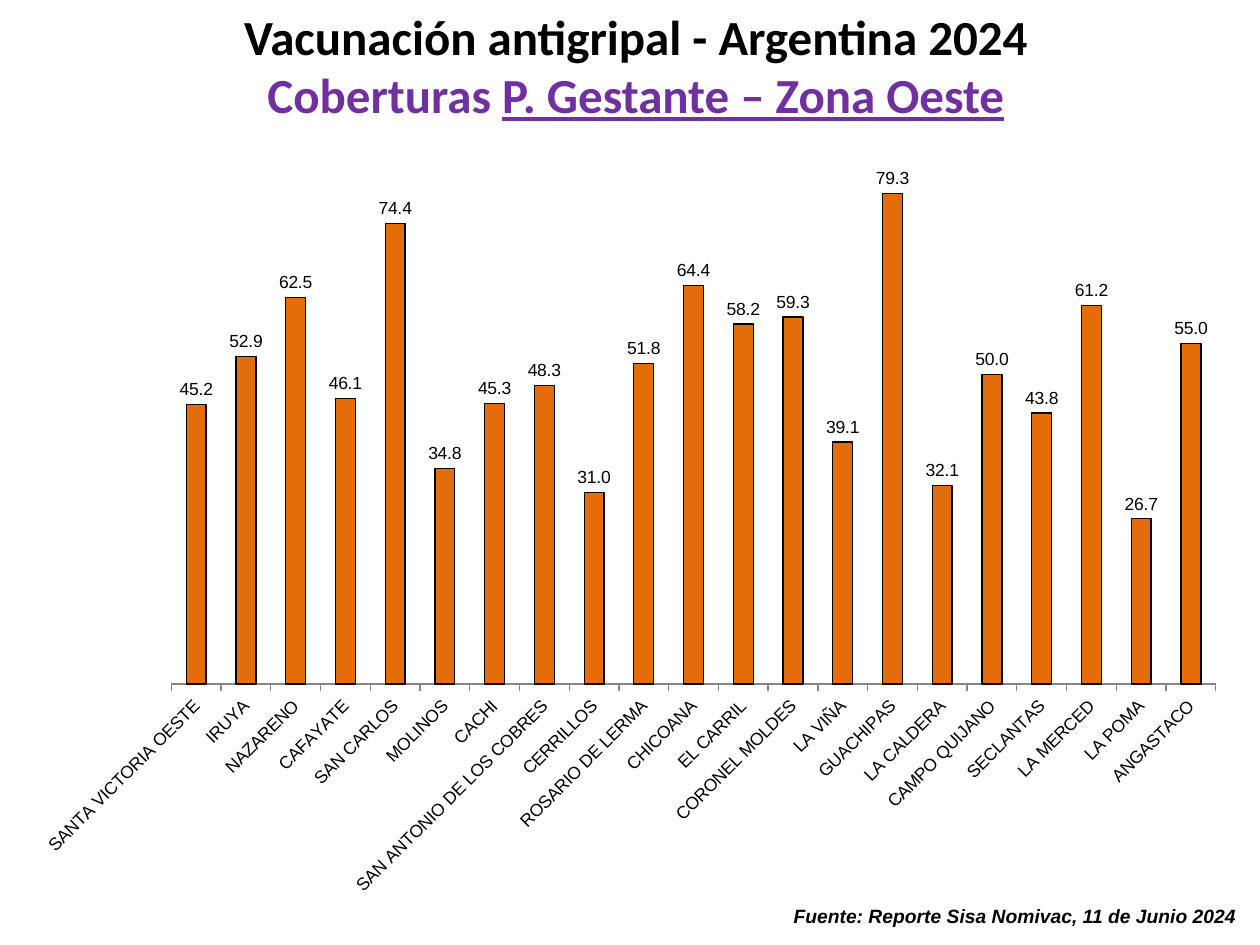
from dataclasses import dataclass

from lxml import etree
from pptx import Presentation
from pptx.chart.data import CategoryChartData
from pptx.dml.color import RGBColor
from pptx.enum import chart as ch, text
from pptx.oxml import ns
from pptx.util import Inches, Pt


@dataclass(frozen=True)
class Theme:
    ink: str = "000000"
    accent: str = "7030A0"
    bar: str = "E46C0A"
    axis: str = "868686"
    title_font: str = "Calibri"
    body_font: str = "Arial"
    title_size: int = 28
    source_size: int = 11
    chart_size: int = 10


THEME = Theme()


@dataclass(frozen=True)
class Run:
    words: str
    size: int
    face: str
    color: str = THEME.ink
    italic: bool = False
    underline: bool = False


@dataclass(frozen=True)
class Box:
    left: float
    top: float
    width: float
    height: float

    def emu(self) -> tuple:
        return tuple(map(Inches, (self.left, self.top, self.width, self.height)))


COVERAGE = {
    "SANTA VICTORIA OESTE": 45.2, "IRUYA": 52.9, "NAZARENO": 62.5,
    "CAFAYATE": 46.1, "SAN CARLOS": 74.4, "MOLINOS": 34.8, "CACHI": 45.3,
    "SAN ANTONIO DE LOS COBRES": 48.3, "CERRILLOS": 31,
    "ROSARIO DE LERMA": 51.8, "CHICOANA": 64.4, "EL CARRIL": 58.2,
    "CORONEL MOLDES": 59.3, "LA VIÑA": 39.1, "GUACHIPAS": 79.3,
    "LA CALDERA": 32.1, "CAMPO QUIJANO": 50, "SECLANTAS": 43.8,
    "LA MERCED": 61.2, "LA POMA": 26.7, "ANGASTACO": 55,
}


def add_text(slide, box: Box, lines: list[list[Run]], align) -> None:
    frame = slide.shapes.add_textbox(*box.emu()).text_frame
    frame.word_wrap = True
    for index, line in enumerate(lines):
        paragraph = frame.paragraphs[0] if index == 0 else frame.add_paragraph()
        paragraph.alignment = align
        for item in line:
            run = paragraph.add_run()
            run.text = item.words
            formats = {"size": Pt(item.size), "name": item.face, "bold": True,
                       "italic": item.italic, "underline": item.underline}
            for name, value in formats.items():
                setattr(run.font, name, value)
            run.font.color.rgb = RGBColor.from_string(item.color)


def place_plot(chart, frame: Box, inner: Box) -> None:
    """Fix the inner plot area, given in inches from the corner of the chart frame."""
    plot_area = chart._chartSpace.chart.plotArea
    for old in plot_area.findall(ns.qn("c:layout")):
        plot_area.remove(old)
    layout = etree.Element(ns.qn("c:layout"))
    manual = etree.SubElement(layout, ns.qn("c:manualLayout"))
    settings = {"layoutTarget": "inner", "xMode": "edge", "yMode": "edge",
                "x": inner.left / frame.width, "y": inner.top / frame.height,
                "w": inner.width / frame.width, "h": inner.height / frame.height}
    for name, value in settings.items():
        etree.SubElement(manual, ns.qn(f"c:{name}")).set("val", str(value))
    plot_area.insert(0, layout)


def add_coverage_chart(slide, box: Box, inner: Box) -> None:
    data = CategoryChartData(number_format="0.0")
    data.categories = list(COVERAGE)
    data.add_series("Series 1", list(COVERAGE.values()))
    chart = slide.shapes.add_chart(
        ch.XL_CHART_TYPE.COLUMN_CLUSTERED, *box.emu(), data).chart
    chart.has_legend = chart.has_title = False
    chart.font.size, chart.font.name = Pt(THEME.chart_size), THEME.body_font
    chart.font.color.rgb = RGBColor.from_string(THEME.ink)
    place_plot(chart, box, inner)

    values = chart.value_axis
    for name, value in {"minimum_scale": 0, "maximum_scale": 90,
                        "has_major_gridlines": False, "visible": False}.items():
        setattr(values, name, value)

    towns = chart.category_axis
    towns.major_tick_mark = ch.XL_TICK_MARK.OUTSIDE
    towns.format.line.color.rgb = RGBColor.from_string(THEME.axis)
    towns.format.line.width = Pt(0.75)
    towns.tick_labels.font.size = Pt(THEME.chart_size)
    towns._element.find(ns.qn("c:txPr")).find(ns.qn("a:bodyPr")).set("rot", "-2700000")

    plot = chart.plots[0]
    plot.gap_width, plot.vary_by_categories = 150, False
    bars = plot.series[0].format
    bars.fill.solid()
    bars.fill.fore_color.rgb = RGBColor.from_string(THEME.bar)
    bars.line.color.rgb = RGBColor.from_string(THEME.ink)
    bars.line.width = Pt(0.75)
    plot.has_data_labels = True
    for name, value in {"show_value": True, "number_format": "#,##0.0",
                        "number_format_is_linked": False,
                        "position": ch.XL_LABEL_POSITION.OUTSIDE_END}.items():
        setattr(plot.data_labels, name, value)


def main() -> None:
    deck = Presentation()
    deck.slide_width, deck.slide_height = Inches(10), Inches(7.5)
    slide = deck.slides.add_slide(deck.slide_layouts[6])
    heading = (THEME.title_size, THEME.title_font)
    add_text(slide, Box(0.64, 0, 8.81, 1.04), [
        [Run("Vacunación antigripal - Argentina 2024", *heading)],
        [Run("Coberturas ", *heading, THEME.accent),
         Run("P. Gestante – Zona Oeste", *heading, THEME.accent, underline=True)],
    ], text.PP_ALIGN.CENTER)
    add_text(slide, Box(6.2, 7.13, 3.96, 0.27), [
        [Run("Fuente: Reporte Sisa Nomivac, 11 de Junio 2024",
             THEME.source_size, THEME.body_font, italic=True)],
    ], text.PP_ALIGN.LEFT)
    add_coverage_chart(slide, Box(0.16, 0.88, 9.69, 6.36), Box(1.2, 0.13, 8.29, 4.42))
    deck.save("out.pptx")


if __name__ == "__main__":
    main()
